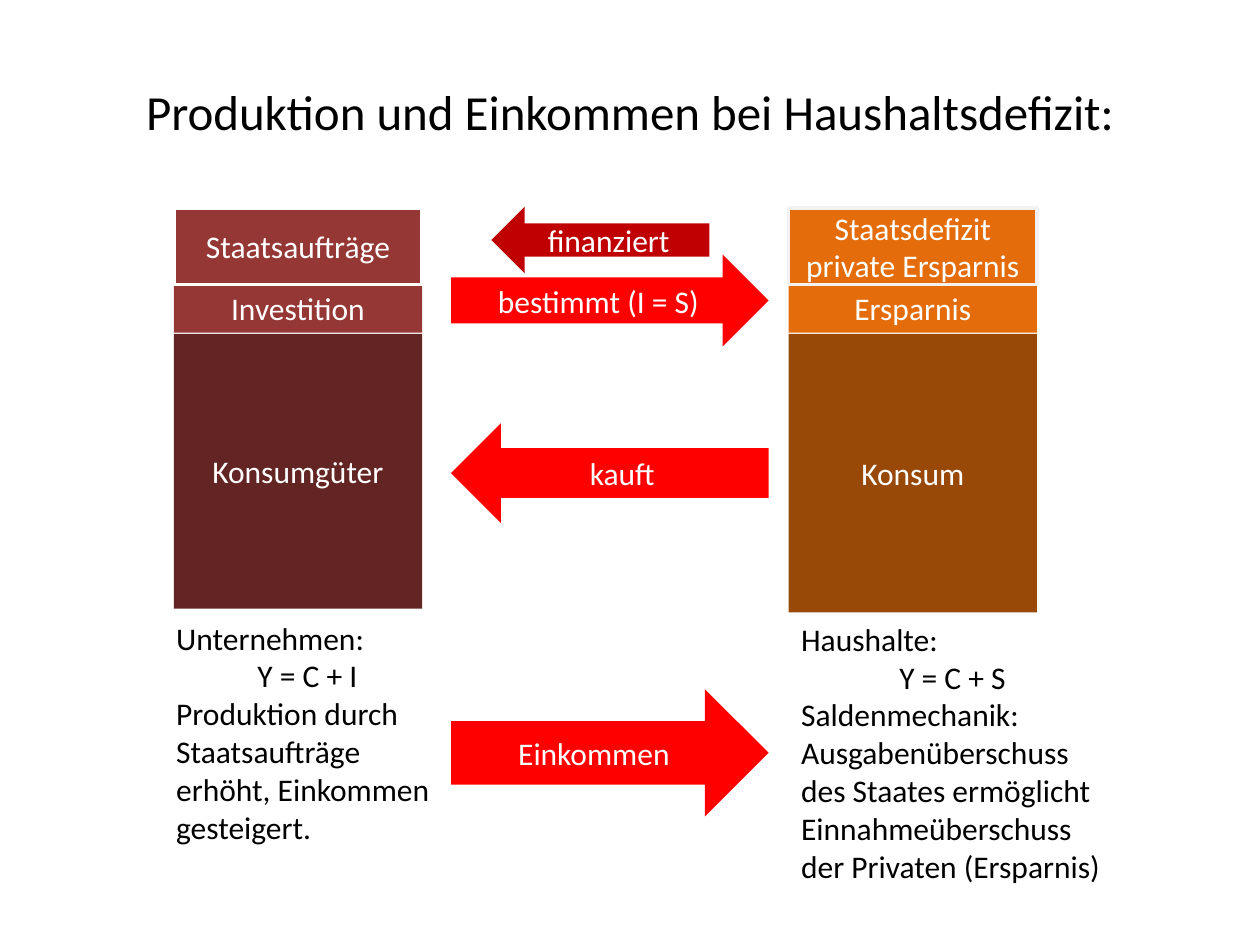
from pptx import Presentation
from pptx.dml.color import RGBColor
from pptx.enum.shapes import MSO_SHAPE
from pptx.enum.text import MSO_ANCHOR, PP_ALIGN
from pptx.util import Pt

PX = 9144  # EMU per px, 100 px to the inch
FONT = "Calibri"
RECT, LEFT_ARROW, RIGHT_ARROW = (
    MSO_SHAPE.RECTANGLE, MSO_SHAPE.LEFT_ARROW, MSO_SHAPE.RIGHT_ARROW)
LEFT, CENTER = PP_ALIGN.LEFT, PP_ALIGN.CENTER
MIDDLE = MSO_ANCHOR.MIDDLE


def color(hex_code):
    return RGBColor.from_string(hex_code)


def emu(*lengths):
    return [length * PX for length in lengths]


def style(paragraph, text, size, hex_code, align):
    paragraph.text = text
    paragraph.alignment = align
    paragraph.font.name = FONT
    paragraph.font.size = Pt(size)
    paragraph.font.color.rgb = color(hex_code)


def add_block(slide, kind, box, label, fill, outline=None):
    block = slide.shapes.add_shape(kind, *emu(*box))
    block.shadow.inherit = False
    block.fill.solid()
    block.fill.fore_color.rgb = color(fill)
    if outline:
        block.line.color.rgb = color(outline)
        block.line.width = Pt(2)
    else:
        block.line.fill.background()
    frame = block.text_frame
    frame.word_wrap = True
    frame.vertical_anchor = MIDDLE
    style(frame.paragraphs[0], label, 18, "FFFFFF", CENTER)


def add_title(slide, box, text):
    title = slide.shapes.title
    title.left, title.top, title.width, title.height = emu(*box)
    title.text_frame.vertical_anchor = MIDDLE
    style(title.text_frame.paragraphs[0], text, 28, "000000", CENTER)


def add_column(slide, box, labels, light, dark, outline):
    """Stack state, saving/investment and consumption blocks in the box."""
    left, top, width, height = box
    state, middle, consumption = labels
    add_block(slide, RECT, (left, top + 100, width, height - 100), consumption, dark)
    add_block(slide, RECT, (left, top + 60, width, 39), middle, light)
    add_block(slide, RECT, (left, top, width, 61), state, light, outline)


def add_explanation(slide, box, lines):
    """Write the sector's text; its second line is the centred equation."""
    frame = slide.shapes.add_textbox(*emu(*box)).text_frame
    frame.word_wrap = True
    for index, line in enumerate(lines):
        paragraph = frame.paragraphs[0] if index == 0 else frame.add_paragraph()
        style(paragraph, line, 18, "000000", CENTER if index == 1 else LEFT)


def add_flows(slide, box):
    """Arrows between the two sectors."""
    left, top, width, _ = box
    red, dark_red = "FF0000", "C00000"
    flows = [
        (RIGHT_ARROW, 0, 383, width, 101, "Einkommen", red),
        (LEFT_ARROW, 0, 172, width, 79, "kauft", red),
        (LEFT_ARROW, 32, 0, 173, 53, "finanziert", dark_red),
        (RIGHT_ARROW, 0, 38, width, 73, "bestimmt (I = S)", red),
    ]
    for kind, x, y, w, h, label, fill in flows:
        add_block(slide, kind, (left + x, top + y, w, h), label, fill)


def main():
    presentation = Presentation()
    presentation.slide_width, presentation.slide_height = emu(1000, 750)
    slide = presentation.slides.add_slide(presentation.slide_layouts[5])

    add_title(slide, (50, 21, 900, 134),
              "Produktion und Einkommen bei Haushaltsdefizit:")

    # Companies
    add_column(slide, (138, 165, 197, 318),
               ("Staatsaufträge", "Investition", "Konsumgüter"),
               "953735", "632523", "FFFFFF")
    add_explanation(slide, (130, 486, 228, 192), [
        "Unternehmen:",
        "Y = C + I",
        "Produktion durch Staatsaufträge erhöht, Einkommen gesteigert.",
    ])

    # Households
    add_column(slide, (626, 165, 197, 321),
               ("Staatsdefizit private Ersparnis", "Ersparnis", "Konsum"),
               "E46C0A", "984807", "F2F2F2")
    add_explanation(slide, (626, 487, 260, 222), [
        "Haushalte:",
        "Y = C + S",
        "Saldenmechanik:",
        "Ausgabenüberschuss des Staates ermöglicht",
        "Einnahmeüberschuss der Privaten (Ersparnis)",
    ])

    add_flows(slide, (358, 164, 252, 484))
    presentation.save("out.pptx")


if __name__ == "__main__":
    main()
